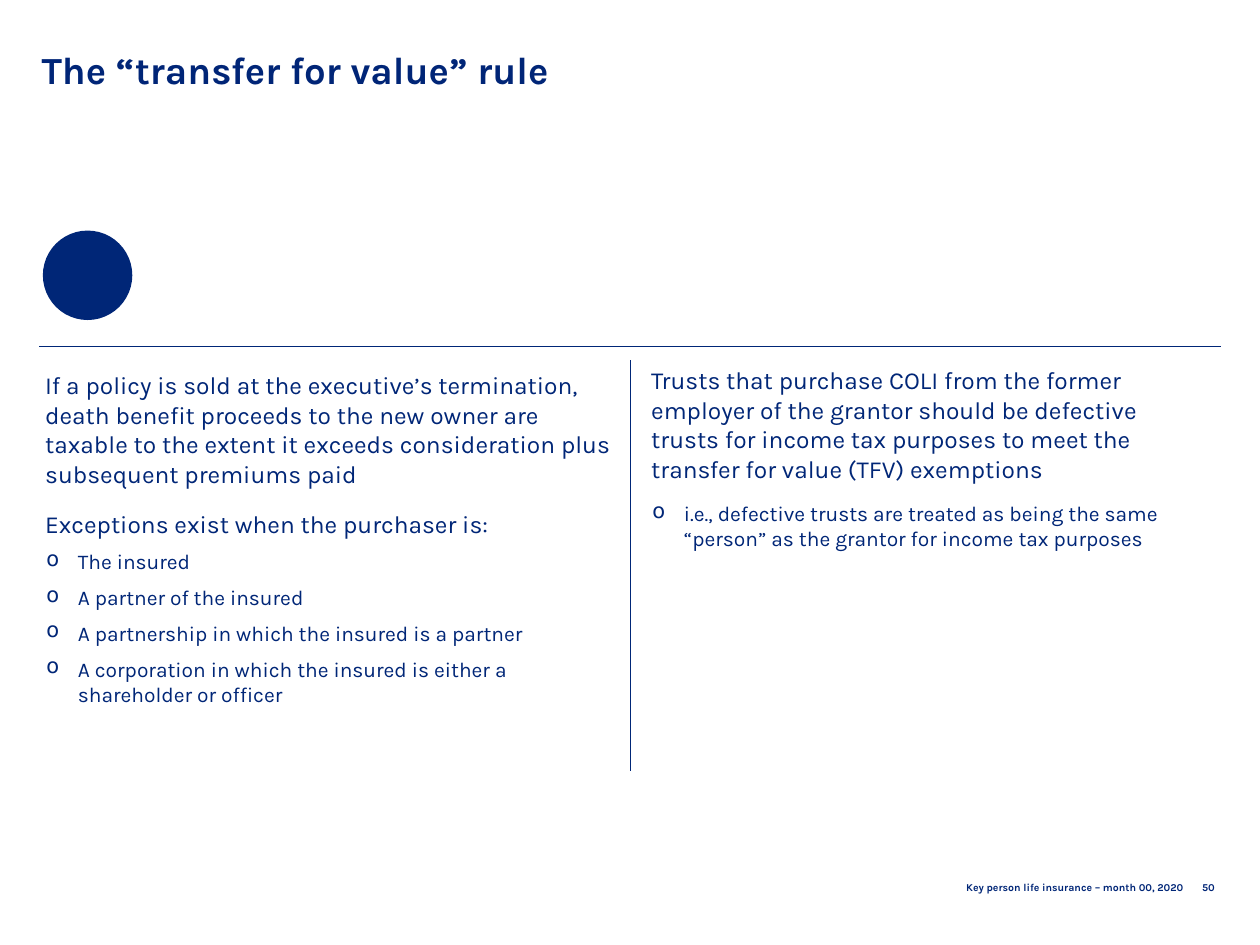
from lxml import etree
from pptx import Presentation
from pptx.dml.color import RGBColor
from pptx.enum.shapes import MSO_CONNECTOR, MSO_SHAPE
from pptx.enum.text import MSO_ANCHOR, MSO_AUTO_SIZE, PP_ALIGN
from pptx.oxml.ns import qn
from pptx.util import Inches, Pt

LEFT, RIGHT = PP_ALIGN.LEFT, PP_ALIGN.RIGHT
TOP, MIDDLE = MSO_ANCHOR.TOP, MSO_ANCHOR.MIDDLE
COLORS = {"title": "002577", "navy": "002677"}
FONT = "Karla"

# Each entry: text, is a bullet, space before in points
TAXATION = [
    ("If a policy is sold at the executive’s termination, death benefit proceeds "
     "to the new owner are taxable to the extent it exceeds consideration plus "
     "subsequent premiums paid", False, 0),
    ("Exceptions exist when the purchaser is:", False, 12),
    ("The insured", True, 6),
    ("A partner of the insured", True, 6),
    ("A partnership in which the insured is a partner", True, 6),
    ("A corporation in which the insured is either a shareholder or officer", True, 6),
]
TRUSTS = [
    ("Trusts that purchase COLI from the former employer of the grantor should be "
     "defective trusts for income tax purposes to meet the \n"
     "transfer for value (TFV) exemptions", False, 0),
    ("i.e., defective trusts are treated as being the same “person” as the grantor "
     "for income tax purposes", True, 10),
]


def rgb(name):
    return RGBColor.from_string(COLORS[name])


def format_runs(paragraph, size, color="navy", bold=False):
    for run in paragraph.runs:
        run.font.name = FONT
        run.font.size = Pt(size)
        run.font.bold = bold
        run.font.color.rgb = rgb(color)


def add_bullet(paragraph):
    properties = paragraph._p.get_or_add_pPr()
    properties.set("marL", str(Inches(0.26)))
    properties.set("indent", str(Inches(-0.25)))
    bullet_color = etree.SubElement(properties, qn("a:buClr"))
    etree.SubElement(bullet_color, qn("a:srgbClr"), val=COLORS["navy"])
    etree.SubElement(properties, qn("a:buChar"), char="o")


def add_title(slide, text):
    title = slide.shapes.title
    title.left, title.top = Inches(0.23), Inches(0.42)
    title.width, title.height = Inches(9.45), Inches(0.82)
    frame = title.text_frame
    frame.text = text
    frame.auto_size = MSO_AUTO_SIZE.NONE
    frame.vertical_anchor = TOP
    heading = frame.paragraphs[0]
    heading.alignment = LEFT
    heading.line_spacing = Pt(18.8)
    format_runs(heading, 21.9, "title", bold=True)


def add_text_frame(slide, left, top, width, height):
    box = slide.shapes.add_textbox(Inches(left), Inches(top), Inches(width), Inches(height))
    box.text_frame.word_wrap = True
    return box.text_frame


def add_column(slide, left, top, width, height, entries):
    frame = add_text_frame(slide, left, top, width, height)
    for index, (text, is_bullet, space_before) in enumerate(entries):
        paragraph = frame.add_paragraph() if index else frame.paragraphs[0]
        paragraph.text = text
        if is_bullet:
            paragraph.level = 1
            add_bullet(paragraph)
        paragraph.space_before = Pt(space_before)
        format_runs(paragraph, 12 if is_bullet else 14)


def add_footer(slide, left, top, width, height, text, color, anchor):
    frame = add_text_frame(slide, left, top, width, height)
    frame.text = text
    frame.vertical_anchor = anchor
    frame.paragraphs[0].alignment = RIGHT
    format_runs(frame.paragraphs[0], 6, color, bold=True)


def add_rule(slide, x1, y1, x2, y2):
    rule = slide.shapes.add_connector(
        MSO_CONNECTOR.STRAIGHT, Inches(x1), Inches(y1), Inches(x2), Inches(y2))
    rule.line.color.rgb = rgb("navy")
    rule.line.width = Pt(0.5)
    etree.SubElement(rule._element.spPr, qn("a:effectLst"))


def add_disc(slide, left, top, diameter):
    disc = slide.shapes.add_shape(
        MSO_SHAPE.OVAL, Inches(left), Inches(top), Inches(diameter), Inches(diameter))
    disc.shadow.inherit = False
    disc.fill.solid()
    disc.fill.fore_color.rgb = rgb("navy")
    disc.line.fill.background()


def main():
    presentation = Presentation()
    presentation.slide_width, presentation.slide_height = Inches(10), Inches(7.5)
    slide = presentation.slides.add_slide(presentation.slide_layouts.get_by_name("Title Only"))

    add_title(slide, "The “transfer for value” rule")
    add_footer(slide, 9.4, 6.94, 0.34, 0.15, "50", "title", TOP)
    add_footer(slide, 6.11, 6.94, 3.38, 0.2,
               "Key person life insurance – month 00, 2020", "navy", MIDDLE)
    add_rule(slide, 0.31, 2.75, 9.69, 2.75)
    add_column(slide, 0.26, 2.89, 4.69, 3.48, TAXATION)
    add_column(slide, 5.07, 2.85, 4.49, 3.15, TRUSTS)
    add_rule(slide, 5, 2.86, 5, 6.12)
    add_disc(slide, 0.34, 1.83, 0.71)

    presentation.save("out.pptx")


if __name__ == "__main__":
    main()
